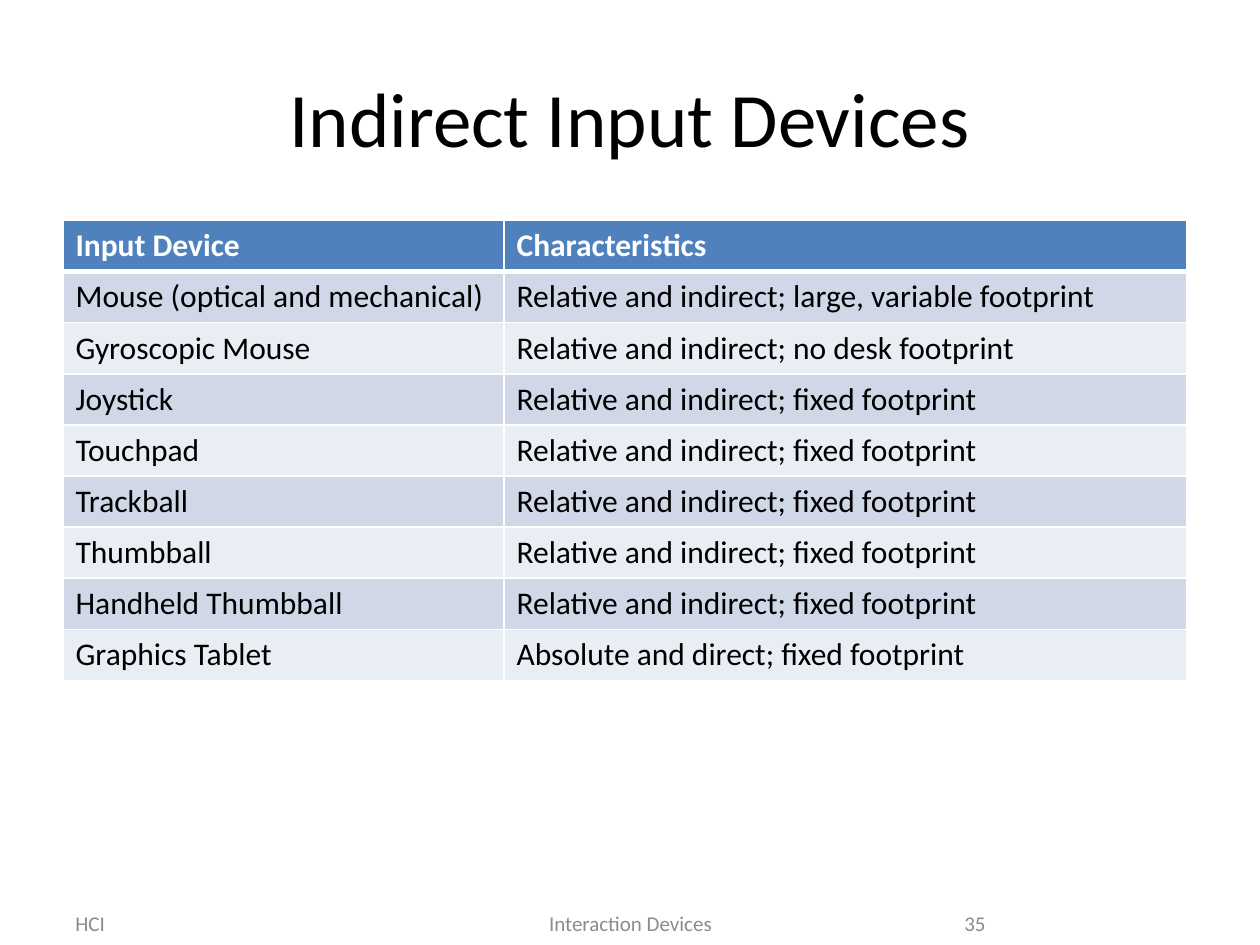
from dataclasses import dataclass

from lxml.etree import SubElement
from pptx import Presentation
from pptx.dml.color import RGBColor
from pptx.enum.text import MSO_ANCHOR, PP_ALIGN
from pptx.oxml.ns import qn
from pptx.util import Inches, Pt

FONT = "Calibri"
BLACK, WHITE, GREY = "000000", "FFFFFF", "8C8C8C"
HEADER_FILL, BAND_FILLS = "4F81BD", ("D0D8E8", "E9EDF4")
FIXED = "Relative and indirect; fixed footprint"
COL_WIDTHS = (3.5, 5.42)
ROWS = (
    ("Input Device", "Characteristics"),
    ("Mouse (optical and mechanical)", "Relative and indirect; large, variable footprint"),
    ("Gyroscopic Mouse", "Relative and indirect; no desk footprint"),
    ("Joystick", FIXED),
    ("Touchpad", FIXED),
    ("Trackball", FIXED),
    ("Thumbball", FIXED),
    ("Handheld Thumbball", FIXED),
    ("Graphics Tablet", "Absolute and direct; fixed footprint"),
)


@dataclass(frozen=True)
class Label:
    text: str
    left: float
    top: float
    width: float
    height: float
    size: int
    color: str
    align: PP_ALIGN


LABELS = (
    Label("Indirect Input Devices", 0.5, 0.3, 9, 1.25, 44, BLACK, PP_ALIGN.CENTER),
    Label("HCI", 0.5, 7.17, 2.33, 0.31, 12, GREY, PP_ALIGN.LEFT),
    Label("Interaction Devices", 3.42, 7.17, 3.17, 0.31, 12, GREY, PP_ALIGN.CENTER),
    Label("35", 7.17, 7.17, 0.75, 0.31, 12, GREY, PP_ALIGN.RIGHT),
)


def rgb(color: str) -> RGBColor:
    return RGBColor.from_string(color)


def style(p, size: int, color: str, bold: bool = False) -> None:
    p.font.name, p.font.size, p.font.bold = FONT, Pt(size), bold
    p.font.color.rgb = rgb(color)


def add_label(slide, label: Label) -> None:
    box = (label.left, label.top, label.width, label.height)
    tf = slide.shapes.add_textbox(*map(Inches, box)).text_frame
    tf.word_wrap = True
    tf.vertical_anchor = MSO_ANCHOR.MIDDLE
    p = tf.paragraphs[0]
    p.text, p.alignment = label.text, label.align
    style(p, label.size, label.color)


def set_border(cell, side: str, width: float) -> None:
    ln = SubElement(cell._tc.get_or_add_tcPr(), qn(f"a:ln{side}"), w=str(Pt(width)))
    SubElement(SubElement(ln, qn("a:solidFill")), qn("a:srgbClr"), val=WHITE)


def fill_cell(cell, text: str, row: int) -> None:
    header = row == 0
    widths = {"L": 1, "R": 1, "T": 3 if row == 1 else 1, "B": 3 if header else 1}
    for side, width in widths.items():
        set_border(cell, side, width)
    cell.fill.solid()
    cell.fill.fore_color.rgb = rgb(HEADER_FILL if header else BAND_FILLS[(row - 1) % 2])
    cell.text = text
    style(cell.text_frame.paragraphs[0], 18, WHITE if header else BLACK, header)


def add_device_table(slide) -> None:
    box = map(Inches, (0.5, 1.75, sum(COL_WIDTHS), 3.65))
    table = slide.shapes.add_table(len(ROWS), len(COL_WIDTHS), *box).table
    for column, width in zip(table.columns, COL_WIDTHS):
        column.width = Inches(width)
    for i, texts in enumerate(ROWS):
        for j, text in enumerate(texts):
            fill_cell(table.cell(i, j), text, i)


def main() -> None:
    """Build the slide on indirect input devices."""
    prs = Presentation()
    prs.slide_width, prs.slide_height = Inches(10), Inches(7.5)
    slide = prs.slides.add_slide(prs.slide_layouts[6])
    add_device_table(slide)
    for label in LABELS:
        add_label(slide, label)
    prs.save("out.pptx")


if __name__ == "__main__":
    main()
